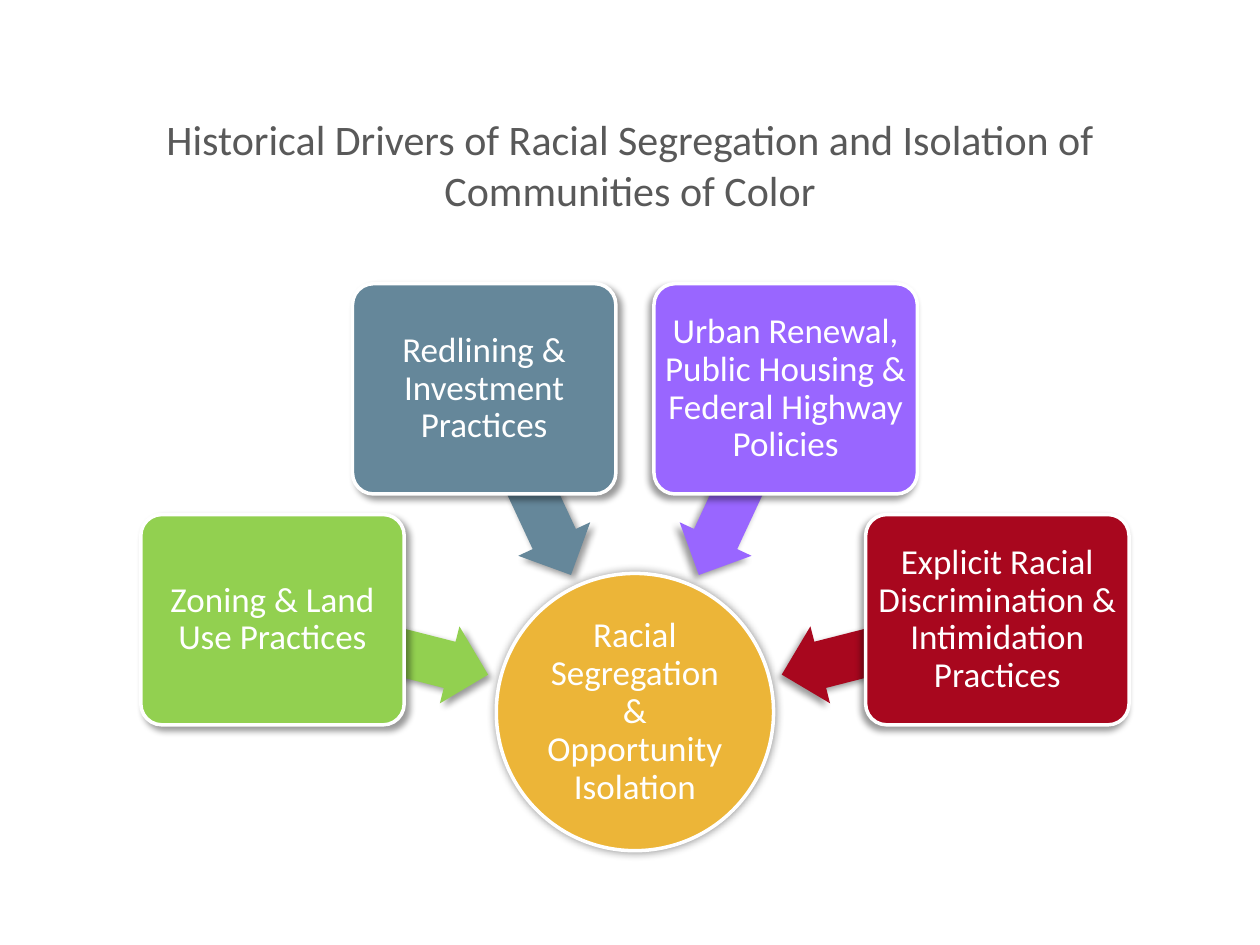
from math import cos, radians, sin

from lxml import etree
from pptx import Presentation
from pptx.dml.color import RGBColor
from pptx.enum.shapes import MSO_SHAPE as SHAPE
from pptx.enum.text import MSO_ANCHOR as ANCHOR, PP_ALIGN as ALIGN
from pptx.oxml.ns import qn
from pptx.util import Cm, Pt

FONT = "Calibri"
COLORS = {
    "title": "595959", "white": "FFFFFF", "shadow": "000000", "hub": "ECB538",
    "green": "92D050", "slate": "65879A", "purple": "9966FF", "red": "A8071E",
}
HUB_SIZE = 5.59
CARD_W, CARD_H = 5.31, 4.24
ARROW_H = 1.6

# Label, colour, angle around the hub, card distance, arrow distance,
# arrow length, shadow direction
DRIVERS = [
    ("Zoning & Land Use Practices", "green", 194.3, 7.54, 5.29, 4.47, 45),
    ("Redlining & Investment Practices", "slate", 245, 7.19, 5.12, 4.14, 45),
    ("Urban Renewal, Public Housing & Federal Highway Policies", "purple",
     295, 7.19, 5.12, 4.14, 135),
    ("Explicit Racial Discrimination & Intimidation Practices", "red",
     345.7, 7.54, 5.29, 4.47, 135),
]


def rgb(name):
    return RGBColor.from_string(COLORS[name])


def add_shadow(sp, blur, dist, direction):
    sp.shadow.inherit = False
    effects = sp._element.spPr.find(qn("a:effectLst"))
    outer = etree.SubElement(
        effects, qn("a:outerShdw"), blurRad=str(Pt(blur)), dist=str(Pt(dist)),
        dir=str(direction * 60000), rotWithShape="0")
    color = etree.SubElement(outer, qn("a:srgbClr"), val=COLORS["shadow"])
    etree.SubElement(color, qn("a:alpha"), val="40000")


def write(sp, text, size, color, inset=None, spacing=None):
    tf = sp.text_frame
    tf.word_wrap = True
    tf.vertical_anchor = ANCHOR.MIDDLE
    if inset is not None:
        tf.margin_left = tf.margin_right = Cm(inset)
        tf.margin_top = tf.margin_bottom = Cm(inset)
    p = tf.paragraphs[0]
    p.alignment = ALIGN.CENTER
    p.line_spacing = spacing
    r = p.add_run()
    r.text = text
    r.font.name = FONT
    r.font.size = Pt(size)
    r.font.color.rgb = rgb(color)


def add_centred(slide, kind, cx, cy, w, h, fill, outlined=True):
    sp = slide.shapes.add_shape(
        kind, Cm(cx - w / 2), Cm(cy - h / 2), Cm(w), Cm(h))
    sp.fill.solid()
    sp.fill.fore_color.rgb = rgb(fill)
    if outlined:
        sp.line.color.rgb = rgb("white")
        sp.line.width = Pt(2)
    else:
        sp.line.fill.background()
    return sp


def add_title(slide, x, y, w, h):
    sp = slide.shapes.add_textbox(Cm(x), Cm(y), Cm(w), Cm(h))
    write(sp, "Historical Drivers of Racial Segregation and Isolation of "
              "Communities of Color", 24, "title")


def add_diagram(slide, x, y, w, h):
    hub_x, hub_y = x + w / 2, y + h - HUB_SIZE / 2

    def around(angle, distance):
        a = radians(angle)
        return hub_x + distance * cos(a), hub_y + distance * sin(a)

    # Hub
    hub = add_centred(slide, SHAPE.OVAL, hub_x, hub_y, HUB_SIZE, HUB_SIZE, "hub")
    add_shadow(hub, 5, 0, 0)
    write(hub, "Racial Segregation & Opportunity Isolation", 20, "white", 0.03, 0.9)

    # Drivers, each with an arrow pointing at the hub
    for label, color, angle, card_r, arrow_r, length, shadow_dir in DRIVERS:
        arrow = add_centred(slide, SHAPE.LEFT_ARROW, *around(angle, arrow_r),
                            length, ARROW_H, color, outlined=False)
        arrow.adjustments[0] = 0.6
        arrow.adjustments[1] = 0.5
        arrow.rotation = angle
        card = add_centred(slide, SHAPE.ROUNDED_RECTANGLE, *around(angle, card_r),
                           CARD_W, CARD_H, color)
        card.adjustments[0] = 0.1
        for sp in (arrow, card):
            add_shadow(sp, 4, 3, shadow_dir)
        write(card, label, 20, "white", 0.1, 0.9)


def main():
    prs = Presentation()
    prs.slide_width, prs.slide_height = Cm(25.4), Cm(19.05)
    slide = prs.slides.add_slide(prs.slide_layouts[6])
    add_diagram(slide, 2.84, 5.72, 19.92, 11.43)
    add_title(slide, 1.9, 1.9, 21.6, 2.82)
    prs.save("out.pptx")


if __name__ == "__main__":
    main()
